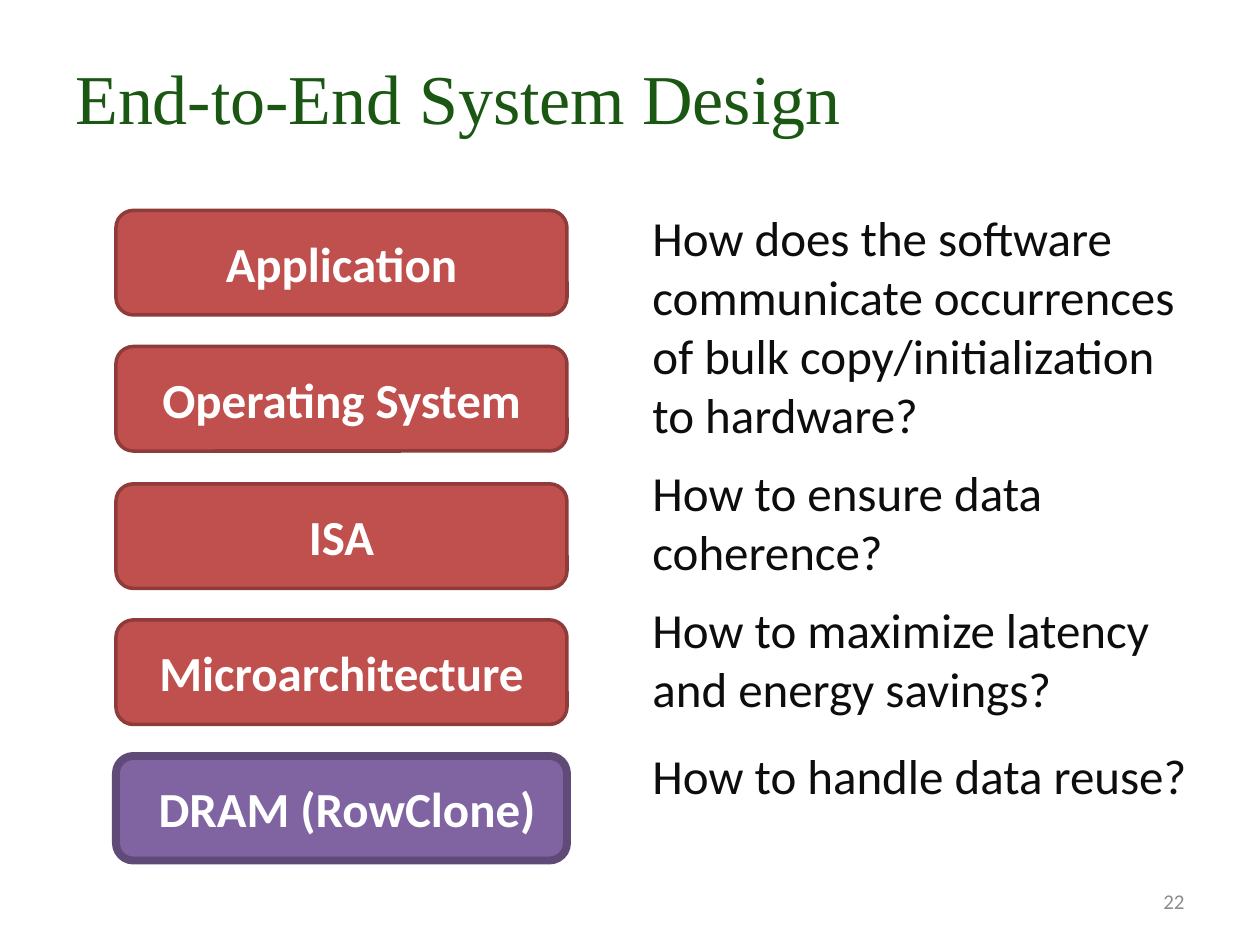
import pptx
import pptx.util
import pptx.dml.color
import pptx.enum.shapes
import pptx.enum.text

Inches = pptx.util.Inches
Pt = pptx.util.Pt
RGBColor = pptx.dml.color.RGBColor
ALIGN = pptx.enum.text.PP_ALIGN
ANCHOR = pptx.enum.text.MSO_ANCHOR

GREEN = RGBColor(0x1A, 0x57, 0x12)
GRAY = RGBColor(0x8C, 0x8C, 0x8C)
INK = RGBColor(0x0D, 0x0D, 0x0D)
WHITE = RGBColor(0xFF, 0xFF, 0xFF)
RED = RGBColor(0xC0, 0x50, 0x4D)
DARK_RED = RGBColor(0x8E, 0x3B, 0x39)
PURPLE = RGBColor(0x80, 0x64, 0xA2)
DARK_PURPLE = RGBColor(0x5F, 0x4A, 0x78)


def write(tf, text, size=28, font="Calibri", color=INK, bold=False,
          align=ALIGN.LEFT, anchor=ANCHOR.TOP):
    tf.word_wrap = True
    tf.vertical_anchor = anchor
    p = tf.paragraphs[0]
    p.alignment = align
    r = p.add_run()
    r.text = text
    r.font.size = Pt(size)
    r.font.name = font
    r.font.color.rgb = color
    r.font.bold = bold


class Deck:
    def __init__(self):
        self.prs = pptx.Presentation()
        self.prs.slide_width = Inches(10)
        self.prs.slide_height = Inches(7.5)
        self.s = self.prs.slides.add_slide(self.prs.slide_layouts[6])

    def text(self, left, top, width, height, text, **fmt):
        sp = self.s.shapes.add_textbox(
            Inches(left), Inches(top), Inches(width), Inches(height))
        write(sp.text_frame, text, **fmt)

    def layer(self, top, text, fill=RED, line=DARK_RED, weight=2):
        """Add one rounded box of the system stack."""
        sp = self.s.shapes.add_shape(
            pptx.enum.shapes.MSO_SHAPE.ROUNDED_RECTANGLE,
            Inches(0.92), Inches(top), Inches(3.58), Inches(0.83))
        sp.shadow.inherit = False
        sp.fill.solid()
        sp.fill.fore_color.rgb = fill
        sp.line.color.rgb = line
        sp.line.width = Pt(weight)
        write(sp.text_frame, text, color=WHITE, bold=True,
              align=ALIGN.CENTER, anchor=ANCHOR.MIDDLE)


def main():
    deck = Deck()
    deck.text(0.5, 0.14, 9, 1.25, "End-to-End System Design", size=40,
              font="Times New Roman", color=GREEN, anchor=ANCHOR.MIDDLE)
    deck.text(7.17, 6.95, 2.33, 0.4, "22", size=12, color=GRAY,
              align=ALIGN.RIGHT, anchor=ANCHOR.MIDDLE)

    first, pitch = 1.67, 1.083
    layers = ["Application", "Operating System", "ISA", "Microarchitecture"]
    for i, name in enumerate(layers):
        deck.layer(round(first + i * pitch, 2), name)
    deck.layer(6, " DRAM (RowClone)", PURPLE, DARK_PURPLE, 4.5)

    questions = [
        (1.6, 1.99, "How does the software communicate occurrences "
                    "of bulk copy/initialization to hardware?"),
        (3.62, 1.04, "How to ensure data coherence?"),
        (4.71, 1.04, "How to maximize latency and energy savings?"),
        (5.87, 0.57, "How to handle data reuse?"),
    ]
    for top, height, question in questions:
        deck.text(5.08, top, 4.58, height, question)

    deck.prs.save("out.pptx")


if __name__ == "__main__":
    main()
